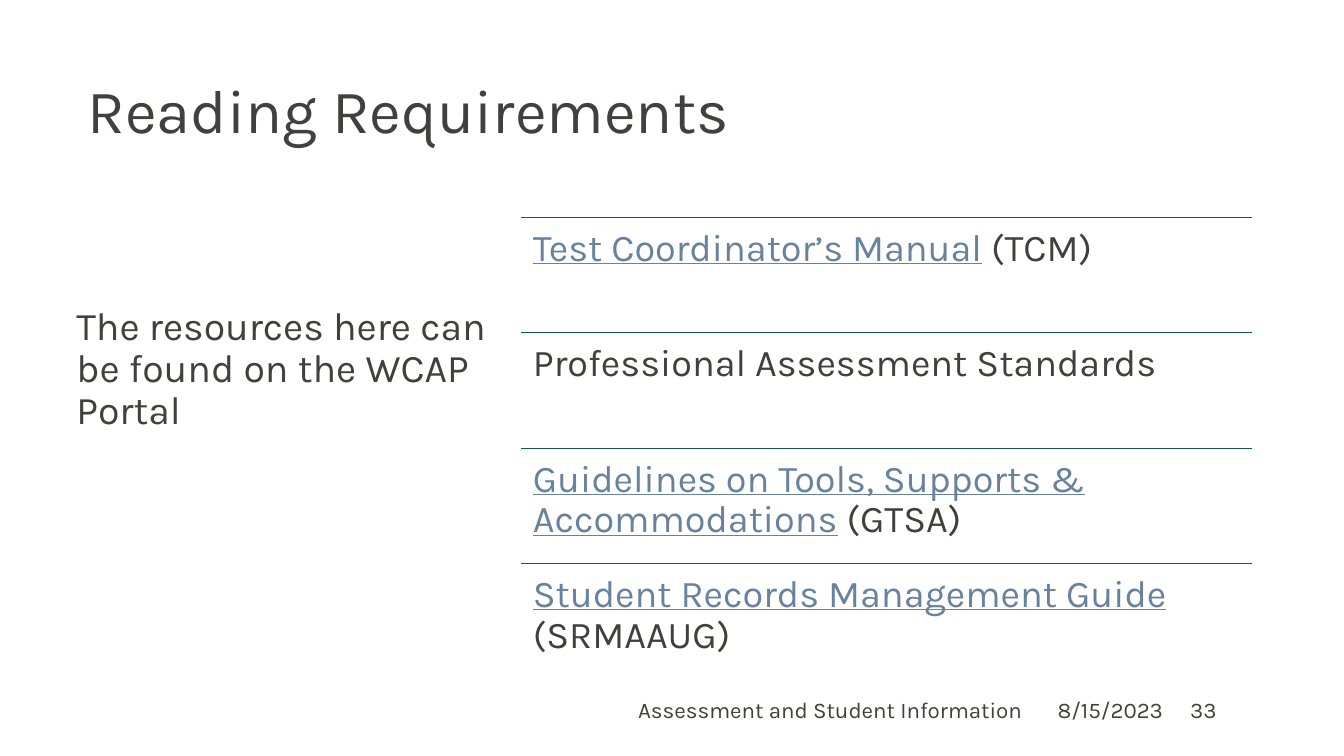
from dataclasses import dataclass

from lxml import etree
from pptx import Presentation
from pptx.dml.color import RGBColor
from pptx.enum import shapes, text
from pptx.oxml import ns
from pptx.util import Pt


@dataclass(frozen=True)
class Theme:
    font: str = "Karla"
    ink: RGBColor = RGBColor(0x40, 0x40, 0x3D)
    link: RGBColor = RGBColor(0x68, 0x82, 0x9E)
    rule: RGBColor = RGBColor(0x0D, 0x57, 0x61)
    title_size: int = 44
    body_size: int = 28
    item_size: int = 27
    footer_size: int = 16


theme = Theme()


def format_text(box, size, align, anchor, line_spacing=1.0, space_after=6):
    """Wrap the box, set its anchor and style its only paragraph."""
    frame = box.text_frame
    frame.word_wrap = True
    frame.auto_size = text.MSO_AUTO_SIZE.NONE
    frame.vertical_anchor = anchor
    para = frame.paragraphs[0]
    para.alignment = align
    para.line_spacing = line_spacing
    para.space_after = Pt(space_after)
    para.font.name = theme.font
    para.font.size = Pt(size)
    para.font.color.rgb = theme.ink


def add_text(left, top, width, height, wording):
    box = page.shapes.add_textbox(Pt(left), Pt(top), Pt(width), Pt(height))
    box.text_frame.text = wording
    return box


LEFT, CENTER, RIGHT = text.PP_ALIGN.LEFT, text.PP_ALIGN.CENTER, text.PP_ALIGN.RIGHT
TOP, MIDDLE = text.MSO_ANCHOR.TOP, text.MSO_ANCHOR.MIDDLE

deck = Presentation()
deck.slide_width, deck.slide_height = Pt(960), Pt(540)
page = deck.slides.add_slide(deck.slide_layouts[5])

# Title
title = page.shapes.title
title.left, title.top, title.width, title.height = Pt(55.4), Pt(28.8), Pt(828), Pt(104.4)
title.text_frame.text = "Reading Requirements"
format_text(title, theme.title_size, LEFT, MIDDLE, 0.9, 0)

# Introduction on the left
intro = add_text(47.5, 215.3, 316, 195.8, "The resources here can be found on the WCAP Portal")
format_text(intro, theme.body_size, LEFT, TOP, 0.9)

# Ruled list of resources: linked wording, then plain wording
resources = [
    ("Test Coordinator’s Manual", " (TCM)"),
    ("", "Professional Assessment Standards"),
    ("Guidelines on Tools, Supports & Accommodations", " (GTSA)"),
    ("Student Records Management Guide", " (SRMAAUG)"),
]
list_left, list_top, list_width, row_height = 372.5, 155.4, 521.5, 82.3

for index, (linked, plain) in enumerate(resources):
    top = list_top + index * row_height
    rule = page.shapes.add_connector(
        shapes.MSO_CONNECTOR.STRAIGHT,
        Pt(list_left), Pt(top), Pt(list_left + list_width), Pt(top))
    rule.line.color.rgb = theme.rule
    rule.line.width = Pt(0.5)
    etree.SubElement(rule._element.spPr, ns.qn("a:effectLst"))

    item = add_text(list_left, top, list_width, row_height, linked or plain)
    frame = item.text_frame
    frame.margin_left = frame.margin_right = Pt(8.1)
    frame.margin_top = frame.margin_bottom = Pt(8.1)
    format_text(item, theme.item_size, LEFT, TOP, 0.9, 9.5)
    if linked:
        para = frame.paragraphs[0]
        span = para.runs[0]
        span.font.color.rgb = theme.link
        span.font.underline = True
        para.add_run().text = plain

# Footer: department, date and page number
footer = [
    (279.4, 457.9, "Assessment and Student Information", RIGHT),
    (733, 120.2, "8/15/2023", CENTER),
    (843.1, 50.4, "33", LEFT),
]
for left, width, wording, align in footer:
    box = add_text(left, 492.5, width, 28.8, wording)
    format_text(box, theme.footer_size, align, MIDDLE)

deck.save("out.pptx")
